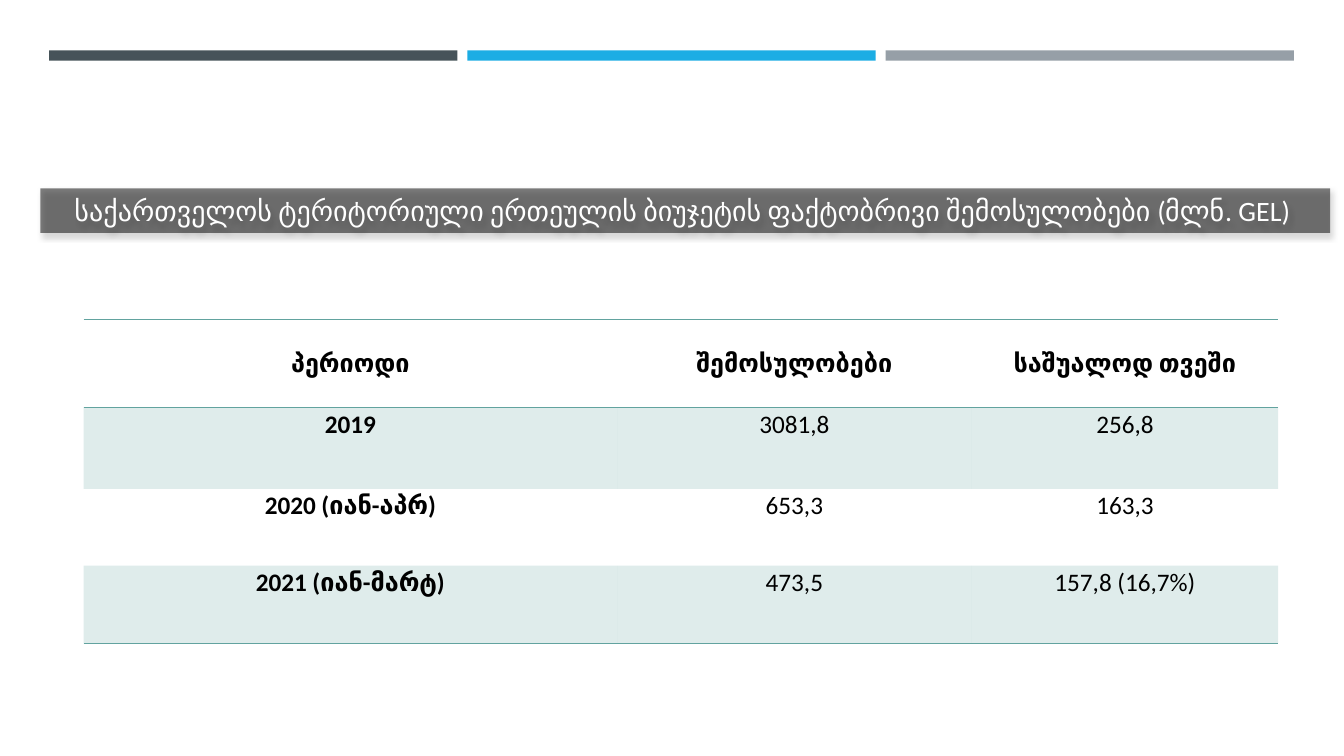
from dataclasses import dataclass

from lxml import etree
from pptx import Presentation
from pptx.dml.color import RGBColor
from pptx.enum.shapes import MSO_SHAPE
from pptx.enum.text import MSO_ANCHOR, MSO_AUTO_SIZE, PP_ALIGN
from pptx.oxml.ns import qn
from pptx.util import Cm, Pt

RECT = MSO_SHAPE.RECTANGLE
MIDDLE, TOP = MSO_ANCHOR.MIDDLE, MSO_ANCHOR.TOP
CENTER = PP_ALIGN.CENTER
GROW = MSO_AUTO_SIZE.SHAPE_TO_FIT_TEXT


@dataclass(frozen=True)
class Theme:
    font: str = "Calibri"
    bars: tuple = ("465359", "1CADE4", "969FA7")
    black: str = "000000"
    white: str = "FFFFFF"
    teal: str = "62A39F"
    title: int = 20
    body: int = 18


THEME = Theme()
TITLE = "საქართველოს ტერიტორიული ერთეულის ბიუჯეტის ფაქტობრივი შემოსულობები (მლნ. GEL) "
ROWS = (
    ("პერიოდი", "შემოსულობები", "საშუალოდ თვეში"),
    ("2019", "3081,8", "256,8"),
    ("2020 (იან-აპრ)", "653,3", "163,3"),
    ("2021 (იან-მარტ)", "473,5", "157,8 (16,7%)"),
)


def add_node(parent, tag, **attrs):
    return etree.SubElement(parent, qn(tag), {k: str(v) for k, v in attrs.items()})


def paint(fill, color):
    fill.solid()
    fill.fore_color.rgb = RGBColor.from_string(color)


def fade(props, percent):
    add_node(props.find(qn("a:solidFill"))[0], "a:alpha", val=percent * 1000)


def write(frame, text, size, color, bold=False):
    para = frame.paragraphs[0]
    para.text = text
    para.alignment = CENTER
    font = para.font
    font.name, font.size, font.bold = THEME.font, Pt(size), bold
    font.color.rgb = RGBColor.from_string(color)
    return para


def add_rect(slide, left, top, width, height, color):
    shape = slide.shapes.add_shape(RECT, left, top, width, height)
    shape.shadow.inherit = False
    paint(shape.fill, color)
    shape.line.fill.background()
    return shape


def add_bars(slide, left, top, width, height, gap=Cm(0.25)):
    count = len(THEME.bars)
    size = (width - gap * (count - 1)) // count
    for i, color in enumerate(THEME.bars):
        add_rect(slide, left + i * (size + gap), top, size, height, color)


def add_title(slide, left, top, width, height):
    band = add_rect(slide, left, top, width, height, THEME.black)
    props = band.element.spPr
    fade(props, 50)
    shade = add_node(props.find(qn("a:effectLst")), "a:outerShdw", blurRad=Pt(4.5),
                     dist=Pt(2.6), dir=53 * 60000, algn="tl", rotWithShape=0)
    color = add_node(shade, "a:srgbClr", val=THEME.black)
    add_node(color, "a:alpha", val=30000)
    frame = band.text_frame
    frame.word_wrap = True
    frame.auto_size = GROW
    write(frame, TITLE, THEME.title, THEME.white)


def add_edges(props, lined):
    for side in "LRTB":
        edge = add_node(props, f"a:ln{side}", w=Pt(1))
        if side in lined:
            add_node(add_node(edge, "a:solidFill"), "a:srgbClr", val=THEME.teal)
        else:
            add_node(edge, "a:noFill")


def style_cell(cell, text, row, col):
    head = row == 0
    lined = {0: "TB", 1: "T", len(ROWS) - 1: "B"}.get(row, "")
    props = cell._tc.get_or_add_tcPr()
    add_edges(props, lined)
    if row % 2:
        paint(cell.fill, THEME.teal)
        fade(props, 20)
    else:
        cell.fill.background()
    cell.margin_left = cell.margin_right = Cm(0.18)
    cell.margin_top = cell.margin_bottom = 0
    cell.vertical_anchor = MIDDLE if head else TOP
    para = write(cell.text_frame, text, THEME.body, THEME.black, head or col == 0)
    para.line_spacing = 1.06


def add_grid(slide, left, top, widths, heights):
    table = slide.shapes.add_table(len(heights), len(widths), left, top,
                                   sum(widths), sum(heights)).table
    table.first_row = table.horz_banding = False
    for column, width in zip(table.columns, widths):
        column.width = width
    for r, (height, texts) in enumerate(zip(heights, ROWS)):
        table.rows[r].height = height
        for c, text in enumerate(texts):
            style_cell(table.cell(r, c), text, r, c)


def main():
    deck = Presentation()
    deck.slide_width, deck.slide_height = Cm(33.87), Cm(19.05)
    slide = deck.slides.add_slide(deck.slide_layouts[6])
    add_bars(slide, Cm(1.24), Cm(1.27), Cm(31.37), Cm(0.26))
    add_title(slide, Cm(1.02), Cm(4.75), Cm(32.5), Cm(1.12))
    add_grid(slide, Cm(2.11), Cm(8.05),
             [Cm(w) for w in (13.44, 8.94, 7.72)],
             [Cm(h) for h in (2.21, 2.06, 1.93, 1.96)])
    deck.save("out.pptx")


if __name__ == "__main__":
    main()
